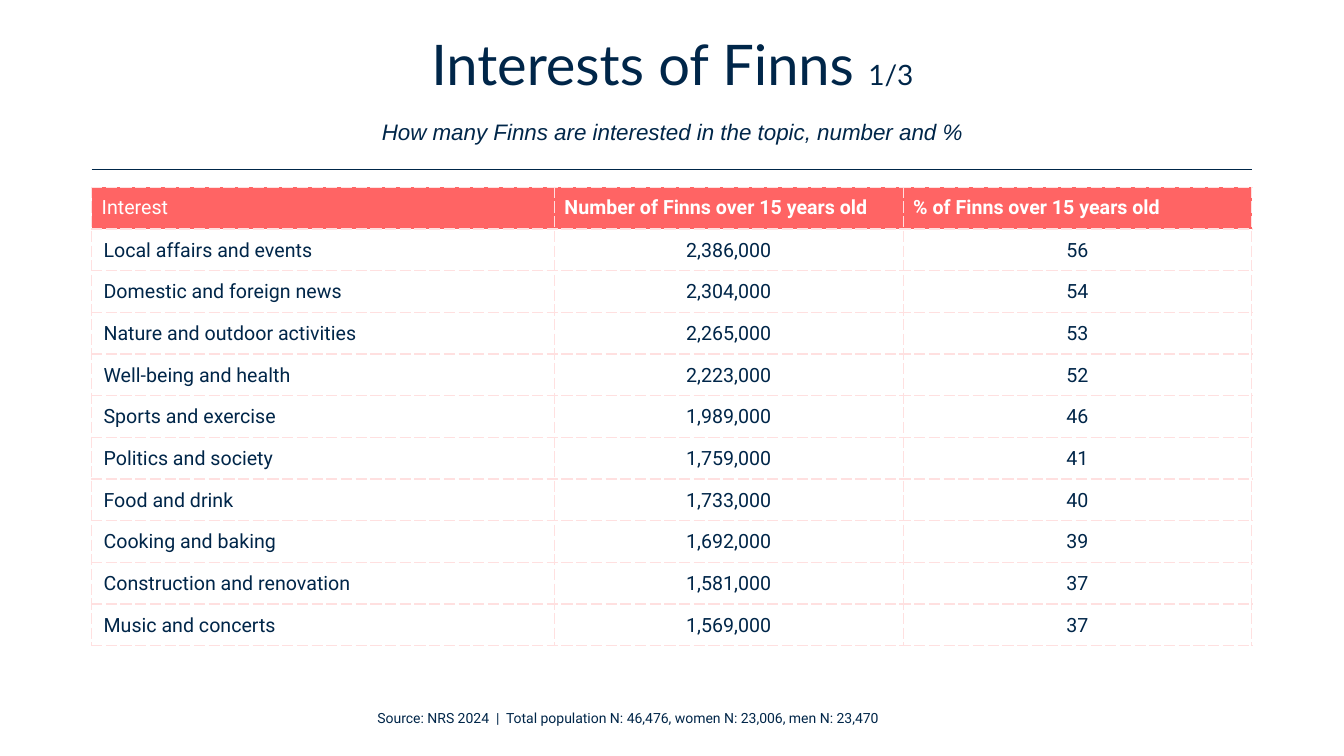
from lxml.etree import SubElement
from pptx import Presentation
from pptx.dml.color import RGBColor
from pptx.enum.shapes import MSO_CONNECTOR
from pptx.enum.text import MSO_ANCHOR, MSO_AUTO_SIZE, PP_ALIGN
from pptx.oxml.ns import qn
from pptx.util import Cm, Pt

NAVY = RGBColor(0x00, 0x26, 0x49)
CORAL = RGBColor(0xFF, 0x64, 0x64)
BLUSH = RGBColor(0xFF, 0xE0, 0xE0)
WHITE = RGBColor(0xFF, 0xFF, 0xFF)

HEADERS = ("Interest", "Number of Finns over 15 years old", "% of Finns over 15 years old")
INTERESTS = (
    ("Local affairs and events", "2,386,000", "56"),
    ("Domestic and foreign news", "2,304,000", "54"),
    ("Nature and outdoor activities", "2,265,000", "53"),
    ("Well-being and health", "2,223,000", "52"),
    ("Sports and exercise", "1,989,000", "46"),
    ("Politics and society", "1,759,000", "41"),
    ("Food and drink", "1,733,000", "40"),
    ("Cooking and baking", "1,692,000", "39"),
    ("Construction and renovation", "1,581,000", "37"),
    ("Music and concerts", "1,569,000", "37"),
)


class SlideBuilder:
    """Builds styled elements on the current slide."""

    def __init__(self, prs):
        self.s = prs.slides.add_slide(prs.slide_layouts[5])
        self.font = {"name": "Roboto", "size": Pt(14), "bold": False, "italic": False}

    def apply(self, target, **values):
        for name, value in values.items():
            setattr(target, name, value)

    def run(self, p, text, color=NAVY, **style):
        r = p.add_run()
        r.text = text
        self.apply(r.font, **{**self.font, **style})
        r.font.color.rgb = color

    def title(self, x, y, w, h, heading, page, subtitle):
        sp = self.s.shapes.title
        self.apply(sp, left=Cm(x), top=Cm(y), width=Cm(w), height=Cm(h))
        tf = sp.text_frame
        self.apply(tf, auto_size=MSO_AUTO_SIZE.NONE, vertical_anchor=MSO_ANCHOR.MIDDLE)
        p = tf.paragraphs[0]
        self.apply(p, alignment=PP_ALIGN.CENTER, line_spacing=Pt(35),
                   space_before=Pt(0), space_after=Pt(18))
        self.run(p, heading, name="Lato", size=Pt(40))
        self.run(p, page, name="Lato", size=Pt(20))
        p.add_line_break()
        self.run(p, subtitle, name="Arial", size=Pt(16), italic=True)

    def text(self, x, y, w, h, text, size):
        tf = self.s.shapes.add_textbox(Cm(x), Cm(y), Cm(w), Cm(h)).text_frame
        tf.word_wrap = True
        p = tf.paragraphs[0]
        p.alignment = PP_ALIGN.CENTER
        self.run(p, text, size=Pt(size))

    def rule(self, x, y, w):
        sp = self.s.shapes.add_connector(MSO_CONNECTOR.STRAIGHT, Cm(x), Cm(y), Cm(x + w), Cm(y))
        sp.line.color.rgb = NAVY
        sp.line.width = Pt(1)
        SubElement(sp._element.spPr, qn("a:effectLst"))

    def borders(self, cell):
        tc_pr = cell._tc.get_or_add_tcPr()
        for side in ("lnL", "lnR", "lnT", "lnB"):
            ln = SubElement(tc_pr, qn(f"a:{side}"), w=str(Pt(1)))
            fill = SubElement(ln, qn("a:solidFill"))
            SubElement(fill, qn("a:srgbClr"), val=str(BLUSH))
            SubElement(ln, qn("a:prstDash"), val="sysDash")

    def cell(self, cell, text, row, col):
        cell.vertical_anchor = MSO_ANCHOR.MIDDLE
        self.borders(cell)
        p = cell.text_frame.paragraphs[0]
        if row == 0:
            cell.fill.solid()
            cell.fill.fore_color.rgb = CORAL
            self.run(p, text, WHITE, bold=col > 0)
            return
        cell.fill.background()
        self.apply(cell, margin_left=Cm(0.03 if col else 0.3), margin_right=Cm(0.03),
                   margin_top=Cm(0.03), margin_bottom=Cm(0))
        p.alignment = PP_ALIGN.CENTER if col else PP_ALIGN.LEFT
        self.run(p, text)

    def table(self, x, y, widths, row_height, rows):
        table = self.s.shapes.add_table(len(rows), len(widths), Cm(x), Cm(y), Cm(sum(widths)),
                                        Cm(row_height * len(rows))).table
        table.horz_banding = False
        for column, width in zip(table.columns, widths):
            column.width = Cm(width)
        for i, values in enumerate(rows):
            table.rows[i].height = Cm(row_height)
            for j, value in enumerate(values):
                self.cell(table.cell(i, j), value, i, j)


def main():
    prs = Presentation()
    prs.slide_width, prs.slide_height = Cm(33.87), Cm(19.05)
    slide = SlideBuilder(prs)
    slide.text(7.62, 17.75, 16.41, 0.69,
               "Source: NRS 2024  |  Total population N: 46,476, women N: 23,006, men N: 23,470", 10)
    slide.title(2.34, 1.07, 29.21, 2.72, "Interests of Finns ", "1/3",
                "How many Finns are interested in the topic, number and %")
    slide.rule(2.31, 4.27, 29.24)
    slide.table(2.31, 4.72, (11.66, 8.79, 8.79), 1.05, (HEADERS, *INTERESTS))
    prs.save("out.pptx")


if __name__ == "__main__":
    main()
